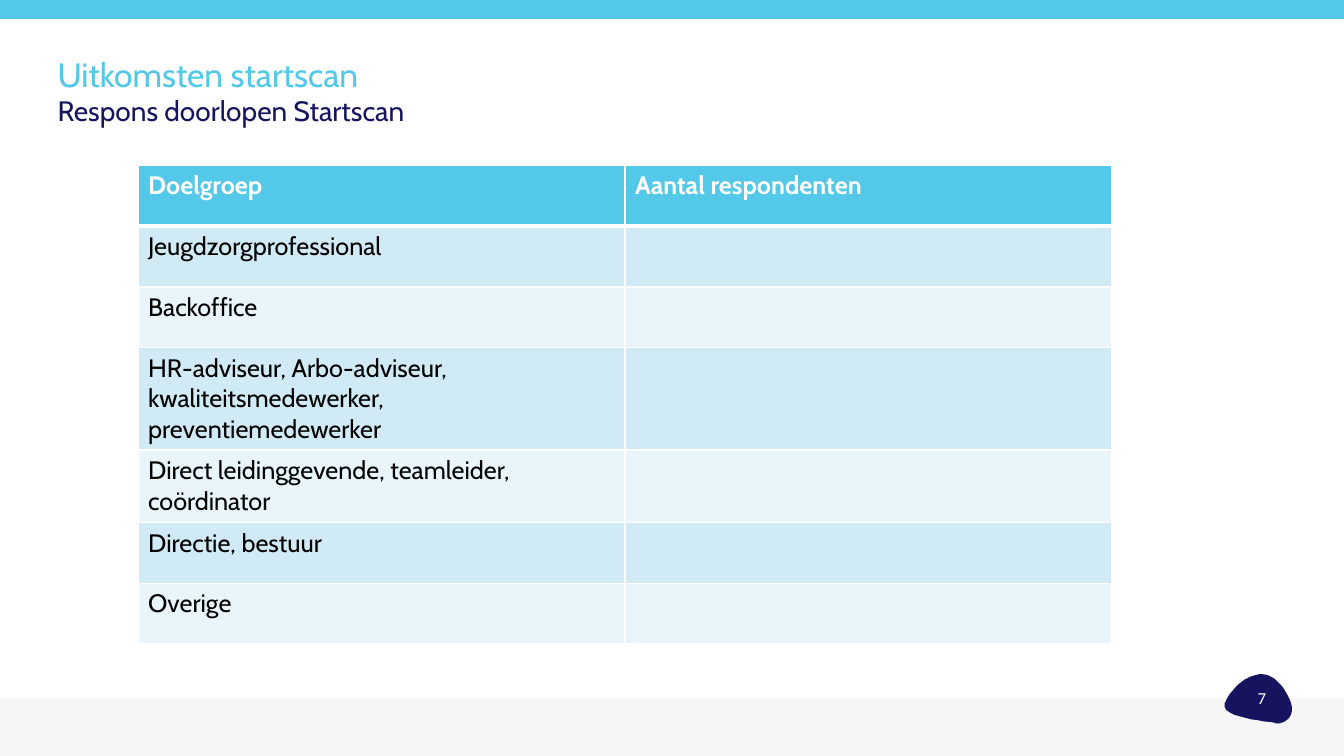
from pptx import Presentation
from pptx.dml.color import RGBColor
from pptx.enum.shapes import MSO_SHAPE as Shape
from pptx.enum.text import MSO_ANCHOR as Anchor, MSO_AUTO_SIZE as Auto, PP_ALIGN as Align
from pptx.oxml.ns import qn
from pptx.util import Cm, Pt
from lxml.etree import SubElement as Sub

SKY, NAVY, GREY = "54C8E8", "16145F", "F4F4F4"
WHITE, BLACK = "FFFFFF", "000000"
BANDS = ("D1EBF6", "E9F5FB")
WIDE, HIGH = 33.87, 19.05

GROUPS = [
    ("Doelgroep", 1.53),
    ("Jeugdzorgprofessional", 1.53),
    ("Backoffice", 1.53),
    ("HR-adviseur, Arbo-adviseur, kwaliteitsmedewerker, preventiemedewerker", 2.57),
    ("Direct leidinggevende, teamleider, coördinator", 1.83),
    ("Directie, bestuur", 1.53),
    ("Overige", 1.53),
]
COUNT = "Aantal respondenten"

# Pebble outline in hundredths of a centimetre: two controls and an end per curve
START = (105, 0)
CURVES = [
    ((97, 0), (89, 3), (82, 5)),
    ((61, 10), (26, 41), (13, 74)),
    ((0, 109), (127, 120), (138, 122)),
    ((140, 124), (143, 124), (145, 124)),
    ((168, 124), (201, 101), (171, 51)),
    ((148, 10), (125, 0), START),
]


def color(code):
    return RGBColor.from_string(code)


def paint(shape, code):
    shape.shadow.inherit = False
    shape.fill.solid()
    shape.fill.fore_color.rgb = color(code)
    shape.line.fill.background()


def style(para, face, size, code, bold=False):
    for run in para.runs:
        font = run.font
        font.name, font.size, font.bold = face, Pt(size), bold
        font.color.rgb = color(code)


def place(shape, box):
    shape.left, shape.top, shape.width, shape.height = map(Cm, box)


def trim(frame, anchor):
    """Remove the insets, wrap the text and keep its size."""
    frame.margin_left = frame.margin_right = 0
    frame.margin_top = frame.margin_bottom = 0
    frame.word_wrap = True
    frame.auto_size = Auto.NONE
    frame.vertical_anchor = anchor


def band(slide, box, code, alpha=None):
    bar = slide.shapes.add_shape(Shape.RECTANGLE, *map(Cm, box))
    paint(bar, code)
    if alpha:
        tint = bar.fill._xPr.find(qn("a:solidFill"))[0]
        Sub(tint, qn("a:alpha"), val=str(alpha * 1000))


def bend(start, curve, steps=12):
    """Return points along one cubic curve."""
    points = []
    for step in range(1, steps + 1):
        t = step / steps
        parts = ((1 - t) ** 3, 3 * t * (1 - t) ** 2, 3 * t * t * (1 - t), t ** 3)
        points.append(tuple(sum(part * spot[axis] for part, spot in zip(parts, (start, *curve)))
                            for axis in (0, 1)))
    return points


def badge(slide, left, top, label):
    unit = Cm(0.01)
    build = slide.shapes.build_freeform(*START, scale=unit)
    last = START
    for curve in CURVES:
        build.add_line_segments(bend(last, curve), close=curve[-1] == START)
        last = curve[-1]
    paint(build.convert_to_shape(Cm(left), Cm(top)), NAVY)
    note = slide.shapes.add_textbox(*map(Cm, (left + 0.46, top + 0.08, 1.22, 1.04)))
    trim(note.text_frame, Anchor.MIDDLE)
    para = note.text_frame.paragraphs[0]
    para.text = label
    para.alignment = Align.CENTER
    style(para, "Calibri", 12, WHITE)


def head(holder, box, text, size, code):
    place(holder, box)
    frame = holder.text_frame
    trim(frame, Anchor.TOP)
    frame.text = text
    para = frame.paragraphs[0]
    props = para._p.get_or_add_pPr()
    props.set("marL", "0")
    props.set("indent", "0")
    Sub(props, qn("a:buNone"))
    para.alignment = Align.LEFT
    para.line_spacing = 0.9
    para.space_before = Pt(0)
    style(para, "Cabin", size, code)


def edge(cell, row):
    """Draw white borders, thick below the header row."""
    props = cell._tc.get_or_add_tcPr()
    thick = {(0, "B"), (1, "T")}
    for side in "LRTB":
        width = Pt(3 if (row, side) in thick else 1)
        line = Sub(props, qn("a:ln" + side), w=str(width))
        Sub(Sub(line, qn("a:solidFill")), qn("a:srgbClr"), val=WHITE)


def grid(slide, left, top, width):
    high = sum(size for _, size in GROUPS)
    box = map(Cm, (left, top, width, high))
    table = slide.shapes.add_table(len(GROUPS), 2, *box).table
    for col in table.columns:
        col.width = Cm(width / 2)
    for row, (group, size) in enumerate(GROUPS):
        table.rows[row].height = Cm(size)
        first = row == 0
        for col, text in enumerate((group, COUNT if first else "")):
            cell = table.cell(row, col)
            edge(cell, row)
            cell.fill.solid()
            cell.fill.fore_color.rgb = color(SKY if first else BANDS[(row - 1) % 2])
            cell.text = text
            style(cell.text_frame.paragraphs[0], "Cabin", 18, WHITE if first else BLACK, first)


def main():
    deck = Presentation()
    deck.slide_width, deck.slide_height = Cm(WIDE), Cm(HIGH)
    slide = deck.slides.add_slide(deck.slide_layouts[1])
    band(slide, (0, 17.6, WIDE, HIGH - 17.6), GREY, 80)
    band(slide, (0, 0, WIDE, 0.48), SKY)
    badge(slide, 30.73, 16.99, "7")
    title, body = slide.placeholders
    head(title, (1.45, 1.47, 30.91, 0.95), "Uitkomsten startscan", 24, SKY)
    head(body, (1.45, 2.44, 9.88, 0.61), "Respons doorlopen Startscan", 20, NAVY)
    grid(slide, 3.48, 4.17, 24.54)
    deck.save("out.pptx")


if __name__ == "__main__":
    main()
